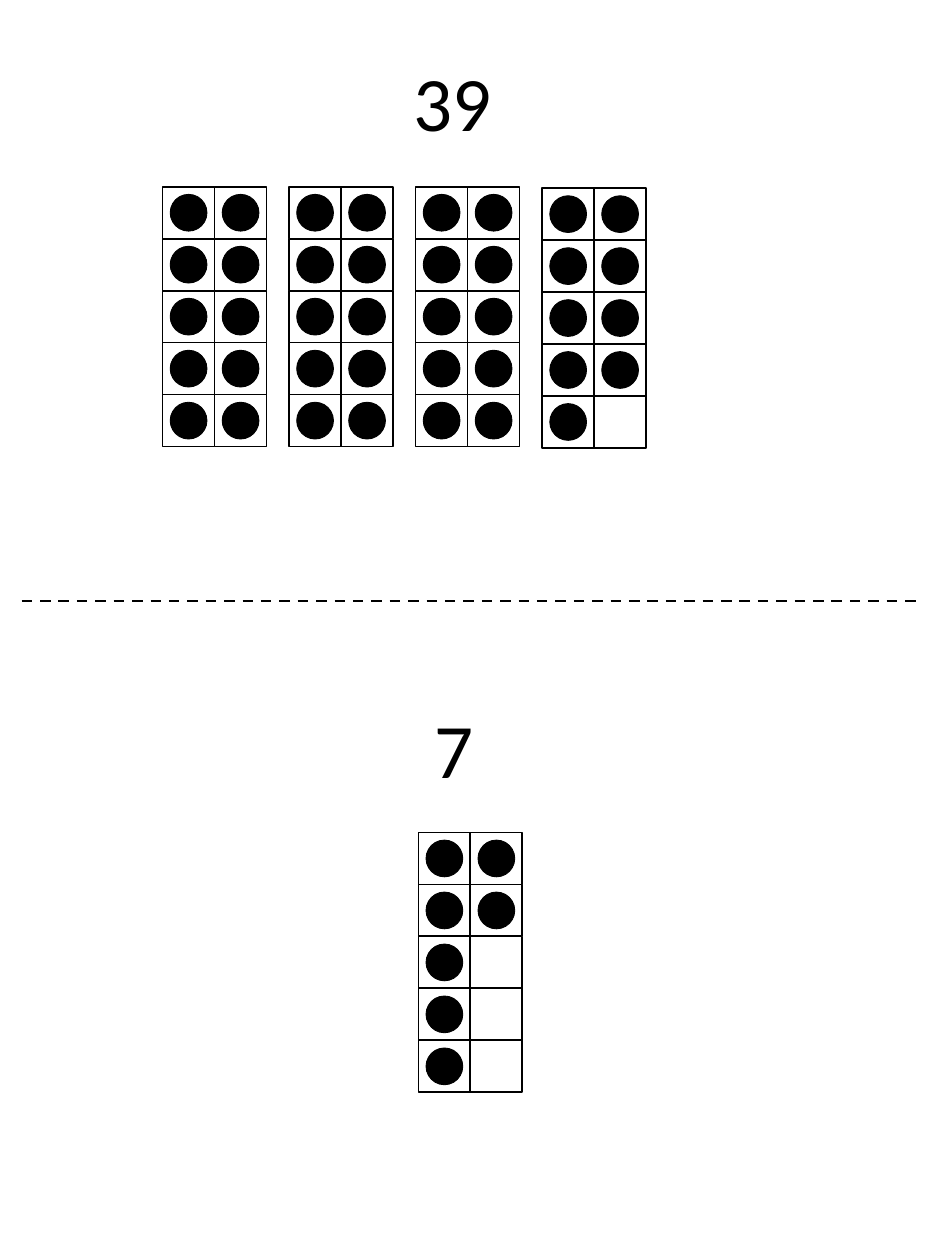
import pptx
import pptx.util
import pptx.dml.color
import pptx.enum.dml
import pptx.enum.shapes
import pptx.enum.text
import pptx.oxml.ns
import lxml.etree

Pt = pptx.util.Pt
Shapes = pptx.enum.shapes.MSO_SHAPE

THEME = {
    "ink": pptx.dml.color.RGBColor(0, 0, 0),
    "paper": pptx.dml.color.RGBColor(255, 255, 255),
    "font": "Calibri",
    "number_size": 44,
}

NUMBERS = [
    {
        "text": "39",
        "label": (199.4, 21.6),
        "frames": [(92.9, 106.7, 10), (165.2, 106.7, 10), (237.5, 106.7, 10), (309.8, 107.5, 9)],
    },
    {"text": "7", "label": (200.2, 391), "frames": [(239.1, 475.7, 7)]},
]

ROWS, COLUMNS = 5, 2
CELL, DOT = 29.7, 21
LABEL_WIDTH, LABEL_HEIGHT = 118.8, 72
CUT_LEFT, CUT_RIGHT, CUT_TOP = 12.4, 525, 343.4


def add_text(page, text, left, top, width, height, size, color, align):
    box = page.shapes.add_textbox(Pt(left), Pt(top), Pt(width), Pt(height))
    frame = box.text_frame
    frame.word_wrap = True
    frame.vertical_anchor = pptx.enum.text.MSO_ANCHOR.MIDDLE
    para = frame.paragraphs[0]
    para.alignment = align
    span = para.add_run()
    span.text = text
    span.font.name = THEME["font"]
    span.font.size = Pt(size)
    span.font.color.rgb = color


def add_figure(page, kind, left, top, size, fill, line_width):
    figure = page.shapes.add_shape(kind, Pt(left), Pt(top), Pt(size), Pt(size))
    figure.shadow.inherit = False
    figure.fill.solid()
    figure.fill.fore_color.rgb = fill
    figure.line.color.rgb = THEME["ink"]
    figure.line.width = Pt(line_width)


def add_ten_frame(page, left, top, count):
    inset = (CELL - DOT) / 2
    for row in range(ROWS):
        for column in range(COLUMNS):
            x, y = left + column * CELL, top + row * CELL
            add_figure(page, Shapes.RECTANGLE, x, y, CELL, THEME["paper"], 1)
            if column * ROWS + row < count:
                add_figure(page, Shapes.OVAL, x + inset, y + inset, DOT, THEME["ink"], 0.5)


def add_cut_line(page):
    cut = page.shapes.add_connector(
        pptx.enum.shapes.MSO_CONNECTOR.STRAIGHT,
        Pt(CUT_LEFT), Pt(CUT_TOP), Pt(CUT_RIGHT), Pt(CUT_TOP))
    cut.line.color.rgb = THEME["ink"]
    cut.line.width = Pt(1.5)
    cut.line.dash_style = pptx.enum.dml.MSO_LINE.DASH
    lxml.etree.SubElement(cut._element.spPr, pptx.oxml.ns.qn("a:effectLst"))


def main():
    deck = pptx.Presentation()
    deck.slide_width, deck.slide_height = Pt(540), Pt(720)
    page = deck.slides.add_slide(deck.slide_layouts[6])
    add_cut_line(page)
    for number in NUMBERS:
        add_text(page, number["text"], *number["label"], LABEL_WIDTH, LABEL_HEIGHT,
                 size=THEME["number_size"], color=THEME["ink"],
                 align=pptx.enum.text.PP_ALIGN.CENTER)
        for left, top, count in number["frames"]:
            add_ten_frame(page, left, top, count)
    deck.save("out.pptx")


if __name__ == "__main__":
    main()
